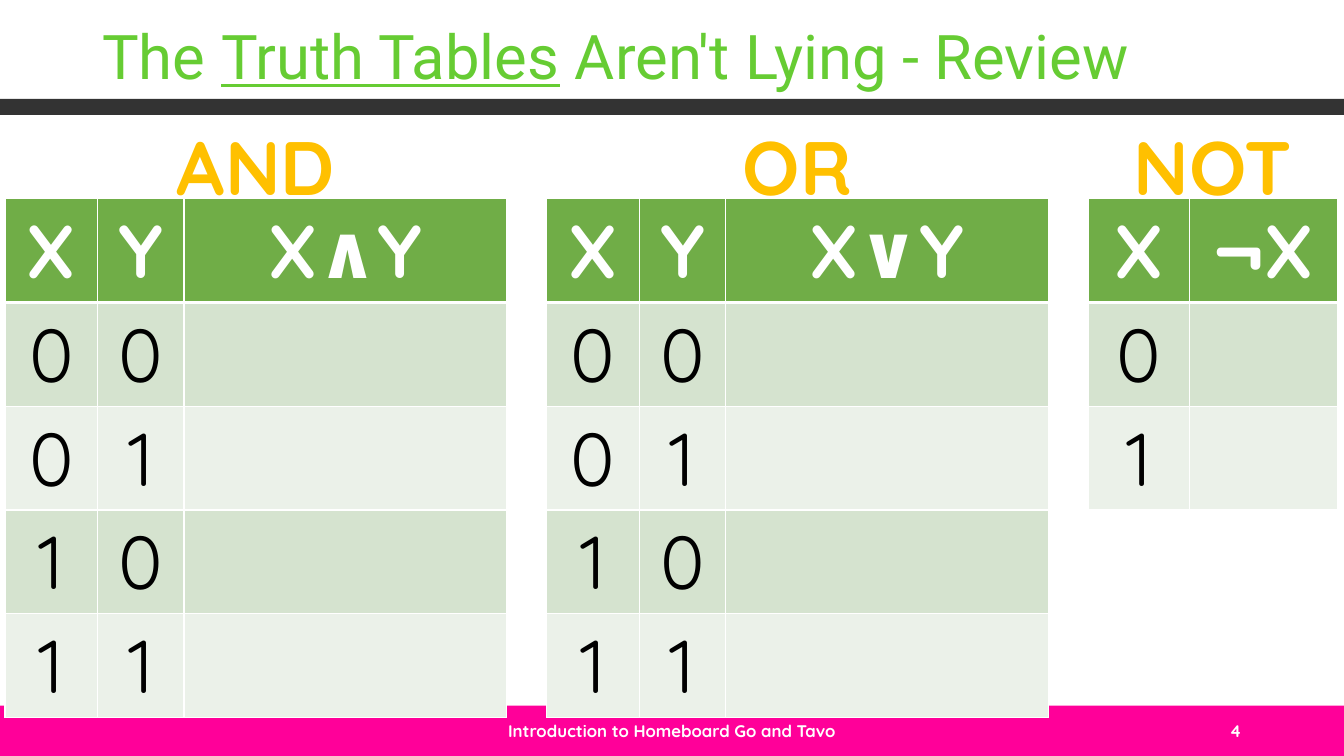
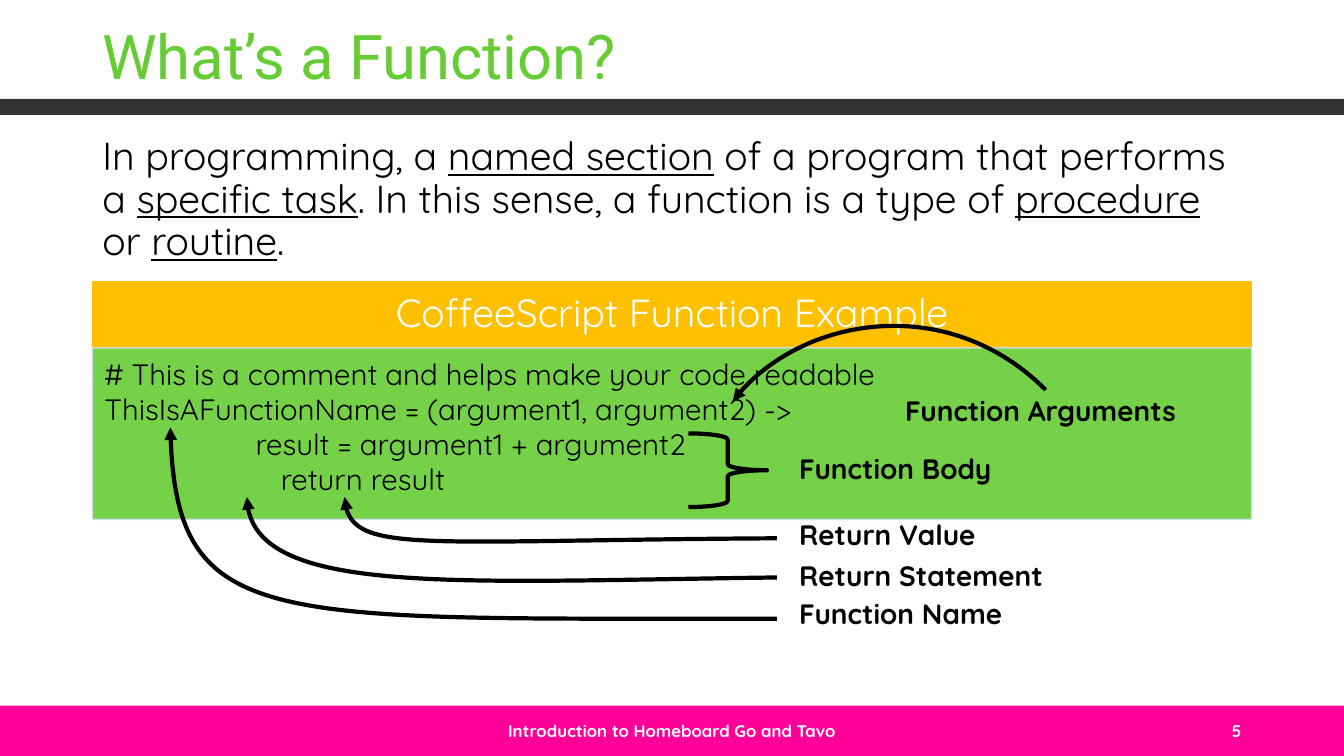
from lxml.etree import SubElement
from pptx import Presentation
from pptx.dml.color import RGBColor
from pptx.enum.shapes import MSO_SHAPE as SHAPE
from pptx.enum.text import MSO_ANCHOR as ANCHOR, PP_ALIGN as ALIGN
from pptx.oxml.ns import qn
from pptx.util import Pt

COLORS = {
    "green": "66CC33", "pink": "FF0099", "dark": "333333", "gold": "FFC000",
    "header": "70AD47", "odd_row": "D5E3CF", "even_row": "EBF1E9",
    "code_edge": "D2DEEF", "black": "000000", "white": "FFFFFF",
}
BODY_FONT, TITLE_FONT = "Quicksand", "Roboto"
FOOTER = "Introduction to Homeboard Go and Tavo"
WIDTH, HEIGHT = 960, 540
LEFT, CONTENT_W = 66, 828
TABLE_TOP, ROW_H = 142, 74.1
BITS = [("0", "0"), ("0", "1"), ("1", "0"), ("1", "1")]


def rgb(name):
    return RGBColor.from_string(COLORS[name])


def add_runs(p, runs, size, color="black", bold=False, font=BODY_FONT):
    for text, underline in runs:
        r = p.add_run()
        r.text = text
        r.font.name, r.font.size, r.font.bold = font, Pt(size), bold
        r.font.underline = underline
        r.font.color.rgb = rgb(color)


def add_text(s, box, runs, size, align=ALIGN.LEFT, anchor=ANCHOR.TOP,
             spacing=1.0, **style):
    tf = s.shapes.add_textbox(*map(Pt, box)).text_frame
    tf.word_wrap = True
    tf.vertical_anchor = anchor
    p = tf.paragraphs[0]
    p.alignment, p.line_spacing = align, spacing
    add_runs(p, runs, size, **style)


def set_alpha(fill_parent, percent):
    for clr in fill_parent.xpath("./a:solidFill/a:srgbClr"):
        SubElement(clr, qn("a:alpha")).set("val", str(percent * 1000))


def add_rect(s, box, fill, line=None, alpha=None):
    sp = s.shapes.add_shape(SHAPE.RECTANGLE, *map(Pt, box))
    sp.shadow.inherit = False
    sp.fill.solid()
    sp.fill.fore_color.rgb = rgb(fill)
    if line:
        sp.line.color.rgb = rgb(line)
        sp.line.width = Pt(1)
    else:
        sp.line.fill.background()
    if alpha:
        for parent in sp._element.xpath("./p:spPr | ./p:spPr/a:ln"):
            set_alpha(parent, alpha)
    return sp


def style_outline(sp):
    sp.shadow.inherit = False
    sp.fill.background()
    sp.line.color.rgb = rgb("black")
    sp.line.width = Pt(3)


def add_curved_arrow(s, tip, control1, control2, tail):
    start, *rest = [tuple(map(Pt, pt)) for pt in (tip, control1, control2, tail)]
    builder = s.shapes.build_freeform(*start)
    builder.add_line_segments(rest, close=False)
    sp = builder.convert_to_shape()
    style_outline(sp)
    segments = sp._element.xpath(".//a:lnTo")
    outline = segments[0].getparent()
    curve = SubElement(outline, qn("a:cubicBezTo"))
    for segment in segments:
        curve.append(segment[0])
        outline.remove(segment)
    ln = sp._element.xpath("./p:spPr/a:ln")[0]
    SubElement(ln, qn("a:headEnd")).set("type", "triangle")


def set_borders(cell, top, bottom):
    tc_pr = cell._tc.get_or_add_tcPr()
    for side, width in (("L", 1), ("R", 1), ("T", top), ("B", bottom)):
        ln = SubElement(tc_pr, qn(f"a:ln{side}"), w=str(Pt(width)))
        fill = SubElement(ln, qn("a:solidFill"))
        SubElement(fill, qn("a:srgbClr"), val=COLORS["white"])


def add_truth_table(s, name, left, widths, header, inputs):
    rows = [header] + [(*bits, "") for bits in inputs]
    total = sum(widths)
    table = s.shapes.add_table(
        len(rows), len(widths), Pt(left), Pt(TABLE_TOP), Pt(total),
        Pt(ROW_H * len(rows))).table
    for column, width in zip(table.columns, widths):
        column.width = Pt(width)
    for i, values in enumerate(rows):
        table.rows[i].height = Pt(ROW_H)
        fill = "header" if i == 0 else "odd_row" if i % 2 else "even_row"
        for j, value in enumerate(values):
            cell = table.cell(i, j)
            set_borders(cell, 3 if i == 1 else 1, 3 if i == 0 else 1)
            cell.fill.solid()
            cell.fill.fore_color.rgb = rgb(fill)
            p = cell.text_frame.paragraphs[0]
            p.alignment = ALIGN.CENTER
            if value:
                add_runs(p, [(value, False)], 53.5,
                         "black" if i else "white", bold=i == 0)
    add_text(s, (left, 82, total, 73), [(name, False)], 54, ALIGN.CENTER,
             color="gold", bold=True)


def add_slide(prs, number, title):
    s = prs.slides.add_slide(prs.slide_layouts[6])
    add_rect(s, (0, 504, WIDTH, 36), "pink")
    add_rect(s, (0, 70.6, WIDTH, 11.5), "dark")
    add_text(s, (LEFT, 0, CONTENT_W, 70), title, 44, anchor=ANCHOR.BOTTOM,
             spacing=0.9, color="green", font=TITLE_FONT)
    for left, width, text, align in (
            (318, 324, FOOTER, ALIGN.CENTER),
            (678, 216, str(number), ALIGN.RIGHT)):
        add_text(s, (left, 507.5, width, 29), [(text, False)], 12, align,
                 ANCHOR.MIDDLE, color="white", bold=True)
    return s


def add_code_panel(s, heading, lines):
    box = (LEFT, 201, CONTENT_W, 47.5)
    add_rect(s, box, "gold", line="gold")
    add_text(s, box, [(heading, False)], 28, ALIGN.CENTER, ANCHOR.MIDDLE,
             spacing=0.9, color="white")
    panel = add_rect(s, (LEFT, 248.5, CONTENT_W, 122.5), "green",
                     line="code_edge", alpha=90)
    tf = panel.text_frame
    tf.word_wrap = True
    tf.vertical_anchor = ANCHOR.TOP
    tf.margin_left = tf.margin_top = Pt(8.6)
    for i, (indent, text) in enumerate(lines):
        p = tf.add_paragraph() if i else tf.paragraphs[0]
        p._p.get_or_add_pPr().set("marL", str(Pt(indent)))
        p.alignment, p.line_spacing, p.space_after = ALIGN.LEFT, 0.9, Pt(2.4)
        add_runs(p, [(text, False)], 21)


def build_truth_tables(prs):
    s = add_slide(prs, 4, [("The ", False), ("Truth Tables", True),
                           (" Aren't Lying - Review", False)])
    pair_widths = (66.2, 61.6, 230.6)
    add_truth_table(s, "AND", 3.6, pair_widths, ("X", "Y", "X∧Y"), BITS)
    add_truth_table(s, "OR", 390.5, pair_widths, ("X", "Y", "X∨Y"), BITS)
    add_truth_table(s, "NOT", 777.5, (72, 105.8), ("X", "¬X"), ["0", "1"])


def build_function(prs):
    s = add_slide(prs, 5, [("What’s a Function?", False)])
    add_text(s, (LEFT, 94.3, CONTENT_W, 102), [
        ("In programming, a ", False), ("named section", True),
        (" of a program that performs a ", False), ("specific task", True),
        (". In this sense, a function is a type of ", False),
        ("procedure", True), (" or ", False), ("routine", True),
        (".", False)], 28, spacing=0.9)
    add_code_panel(s, "CoffeeScript Function Example", [
        (0, "# This is a comment and helps make your code readable"),
        (0, "ThisIsAFunctionName = (argument1, argument2) ->"),
        (108, "result = argument1 + argument2"),
        (126, "return result")])
    brace = s.shapes.add_shape(SHAPE.RIGHT_BRACE,
                               *map(Pt, (491.8, 309.6, 56, 52.6)))
    style_outline(brace)
    for curve in (
            ((176.4, 355), (177, 426.2), (328.3, 415.4), (555, 412.5)),
            ((246.2, 355), (247, 396.7), (308.2, 385.9), (555, 384.5)),
            ((121.7, 305.3), (124.6, 452.2), (195.8, 441.4), (555, 442)),
            ((523.4, 286.6), (568.8, 226.8), (678.2, 209.5), (747, 278.6))):
        add_curved_arrow(s, *curve)
    for left, top, label in (
            (563.8, 319, "Function Body"),
            (563.8, 365.8, "Return Value"),
            (563.8, 395, "Return Statement"),
            (563.8, 422.6, "Function Name"),
            (639.4, 277.2, "Function Arguments")):
        add_text(s, (left, top, 280, 31.5), [(label, False)], 20,
                 anchor=ANCHOR.MIDDLE, bold=True)


def main():
    prs = Presentation()
    prs.slide_width, prs.slide_height = Pt(WIDTH), Pt(HEIGHT)
    build_truth_tables(prs)
    build_function(prs)
    prs.save("out.pptx")


if __name__ == "__main__":
    main()
